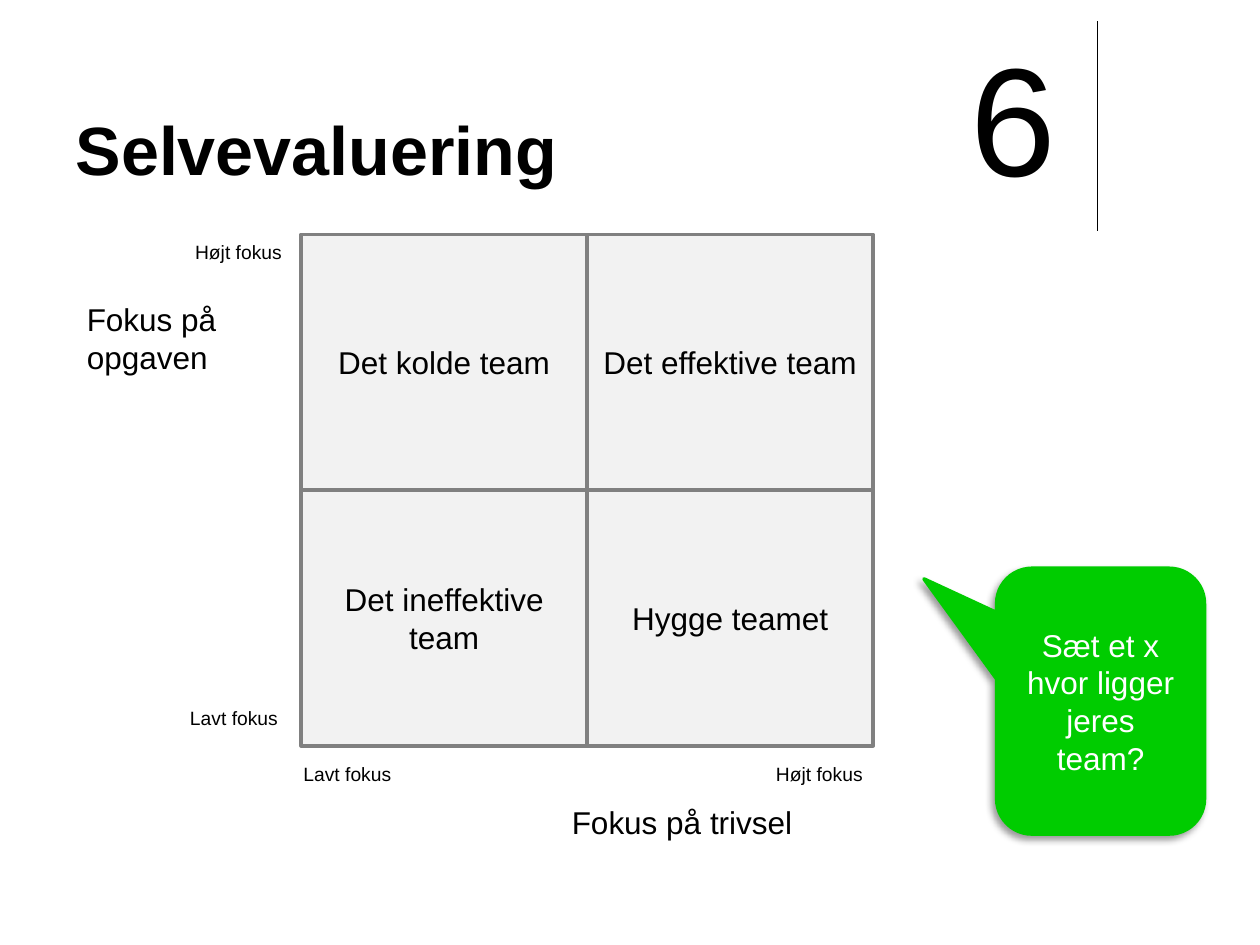
"""Builds the self-evaluation slide with its two-by-two team matrix."""
from dataclasses import dataclass

from lxml.etree import SubElement
from pptx import Presentation
from pptx.dml.color import RGBColor as RGB
from pptx.enum.shapes import MSO_CONNECTOR as CONN, MSO_SHAPE as SHAPE
from pptx.enum.text import MSO_ANCHOR as ANCHOR, PP_ALIGN as ALIGN
from pptx.oxml.ns import qn
from pptx.util import Pt

PX = 9144


@dataclass(frozen=True)
class Theme:
    font: str = "Arial"
    ink: RGB = RGB(0, 0, 0)
    paper: RGB = RGB(255, 255, 255)
    cell: RGB = RGB(0xF2, 0xF2, 0xF2)
    grid: RGB = RGB(0x80, 0x80, 0x80)
    callout: RGB = RGB(0, 0xCC, 0)
    title: int = 39
    body: int = 18
    label: int = 11
    number: int = 88


theme = Theme()


def write(sp, text, size, color=theme.ink, align=ALIGN.LEFT, anchor=ANCHOR.TOP, bold=False):
    tf = sp.text_frame
    tf.word_wrap = True
    tf.vertical_anchor = anchor
    p = tf.paragraphs[0]
    p.alignment = align
    for i, line in enumerate(text.split("\n")):
        if i:
            p.add_line_break()
        r = p.add_run()
        r.text = line
        r.font.name = theme.font
        r.font.size = Pt(size)
        r.font.bold = bold
        r.font.color.rgb = color


def add_box(kind, x, y, w, h, fill, line, text, color):
    sp = s.shapes.add_shape(kind, x * PX, y * PX, w * PX, h * PX)
    sp.shadow.inherit = False
    sp.fill.solid()
    sp.fill.fore_color.rgb = fill
    sp.line.color.rgb = line
    sp.line.width = Pt(2)
    write(sp, text, theme.body, color, ALIGN.CENTER, ANCHOR.MIDDLE)
    return sp


prs = Presentation()
prs.slide_width, prs.slide_height = 1000 * PX, 750 * PX
s = prs.slides.add_slide(prs.slide_layouts[5])

rule = s.shapes.add_connector(CONN.STRAIGHT, 871 * PX, 17 * PX, 871 * PX, 183 * PX)
rule.line.color.rgb = theme.ink
rule.line.width = Pt(0.75)
SubElement(rule._element.spPr, qn("a:effectLst"))

title = s.shapes.title
title.left, title.top, title.width, title.height = 50 * PX, 13 * PX, 825 * PX, 142 * PX
write(title, "Selvevaluering", theme.title, anchor=ANCHOR.BOTTOM, bold=True)

teams = [
    ["Det kolde team", "Det effektive team"],
    ["Det ineffektive team", "Hygge teamet"],
]
cell_w, cell_h = 227, 203
for row, names in enumerate(teams):
    for col, name in enumerate(names):
        add_box(SHAPE.RECTANGLE, 239 + col * cell_w, 186 + row * cell_h, cell_w, cell_h,
                theme.cell, theme.grid, name, theme.ink)

texts = [
    ("Fokus på trivsel", 444, 632, 256, 51, theme.body),
    ("Fokus på\nopgaven", 59, 233, 168, 91, theme.body),
    ("Lavt fokus", 231, 600, 90, 29, theme.label),
    ("Lavt fokus", 141, 556, 90, 29, theme.label),
    ("Højt fokus", 606, 600, 90, 29, theme.label),
    ("Højt fokus", 145, 186, 90, 29, theme.label),
    ("6", 760, 13, 89, 158, theme.number),
]
for text, x, y, w, h, size in texts:
    sp = s.shapes.add_textbox(x * PX, y * PX, w * PX, h * PX)
    sp.text_frame.margin_right = 0
    write(sp, text, size)

callout = add_box(SHAPE.ROUNDED_RECTANGULAR_CALLOUT, 791, 451, 165, 211,
                  theme.callout, theme.callout, "Sæt et x\nhvor ligger jeres team?", theme.paper)
for i, value in enumerate((-0.85, -0.46, 0.17)):
    callout.adjustments[i] = value
effects = callout._element.spPr.find(qn("a:effectLst"))
shadow = SubElement(effects, qn("a:outerShdw"), blurRad=str(Pt(4)), dist=str(Pt(3)),
                    dir=str(135 * 60000), rotWithShape="0")
black = SubElement(shadow, qn("a:srgbClr"), val=str(theme.ink))
SubElement(black, qn("a:alpha"), val="40000")

prs.save("out.pptx")
